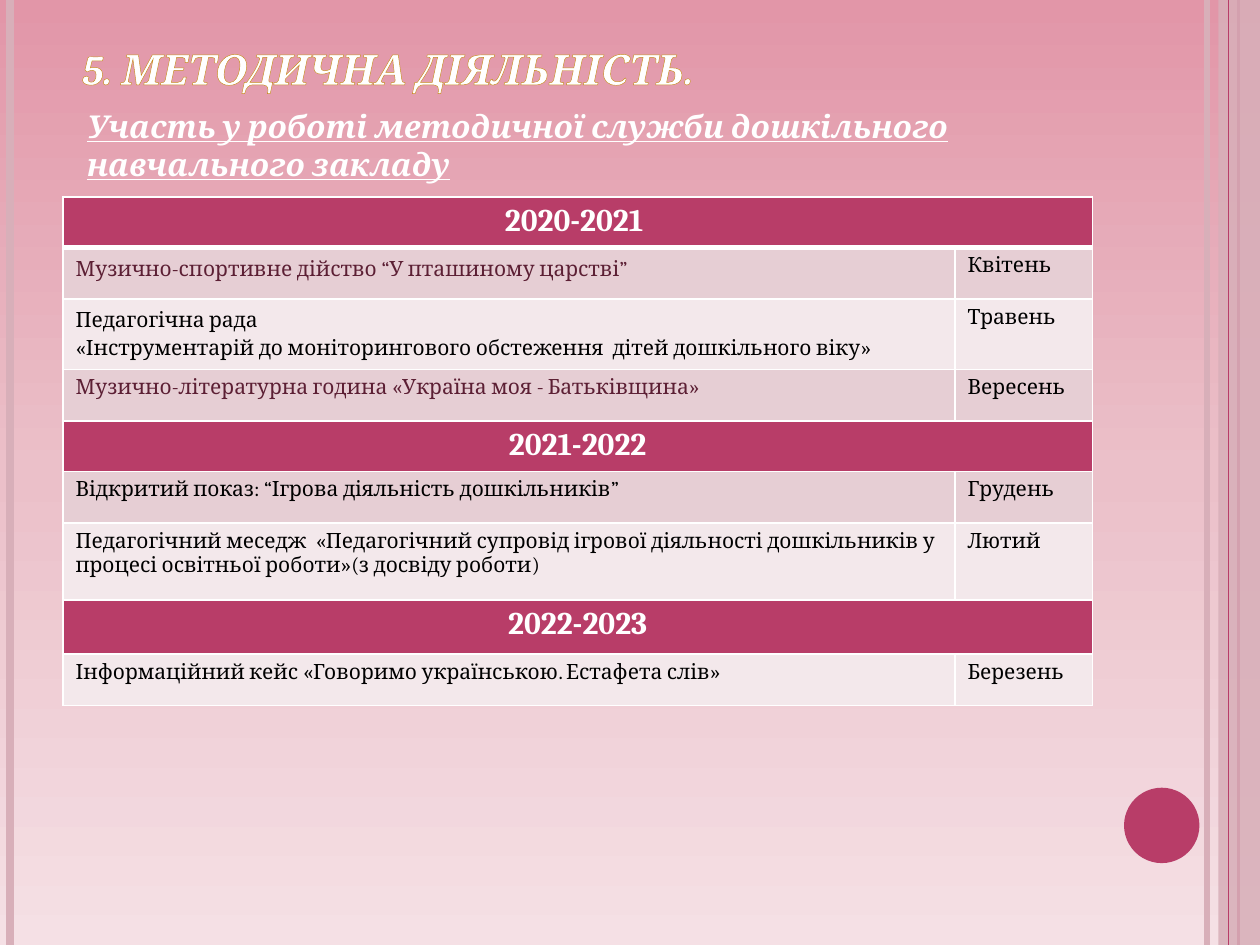
"""Build the slide on methodical work with its table of events by year."""
from copy import deepcopy

from pptx import Presentation
from pptx.dml.color import RGBColor
from pptx.enum import shapes as sh, text as tx
from pptx.oxml import parse_xml
from pptx.oxml.ns import nsdecls, qn
from pptx.util import Cm, Pt

WHITE = RGBColor(255, 255, 255)
BLACK = RGBColor(0, 0, 0)
BERRY = RGBColor(0xB8, 0x3D, 0x68)
PLUM = RGBColor(0x5C, 0x1F, 0x34)
ROSE = RGBColor(0xD8, 0xAF, 0xB9)
DARK = RGBColor(0xE6, 0xCE, 0xD4)
LIGHT = RGBColor(0xF3, 0xE8, 0xEB)
GOLD = RGBColor(0xC6, 0x8B, 0x1C)
SKY = [RGBColor(0xE2, 0x96, 0xA8), RGBColor(0xEB, 0xC0, 0xC9),
       RGBColor(0xF5, 0xE0, 0xE5)]
FONT = "Cambria"
WIDE, HIGH = 25.4, 19.05

TITLE = "5. МЕТОДИЧНА ДІЯЛЬНІСТЬ. "
TOPIC = "Участь у роботі методичної служби дошкільного навчального закладу"
YEARS = [("2020-2021 ", 0.99), ("2021-2022", 0.99), ("2022-2023", 1.09)]
EVENTS = [
    [("Музично-спортивне дійство “У пташиному царстві”",
      "Квітень", 1.04, DARK, PLUM, 1.15),
     ("Педагогічна рада\n«Інструментарій до моніторингового обстеження"
      "  дітей дошкільного віку»", "Травень", 1.37, LIGHT, BLACK, 1.15),
     ("Музично-літературна година «Україна моя - Батьківщина»",
      "Вересень", 1.04, DARK, PLUM, None)],
    [("Відкритий показ: “Ігрова діяльність дошкільників”",
      "Грудень", 1.04, DARK, BLACK, None),
     ("Педагогічний меседж  «Педагогічний супровід ігрової діяльності "
      "дошкільників у процесі освітньої роботи»(з досвіду роботи)",
      "Лютий", 1.55, LIGHT, BLACK, None)],
    [("Інформаційний кейс «Говоримо українською. Естафета слів»",
      "Березень", 1.04, LIGHT, BLACK, None)],
]
COLS = [17.98, 2.77]
RAILS = [(24.33, ROSE, 3), (0.2, ROSE, 4.5), (24.97, BERRY, 1.5)]
EDGE = (24.77, BERRY, 0.75)


def style(para, size, color, bold=False, italic=False):
    font = para.font
    font.name, font.size = FONT, Pt(size)
    font.bold, font.italic = bold, italic
    font.color.rgb = color


def stroke(tag, color, width):
    return parse_xml(
        f'<a:{tag} {nsdecls("a")} w="{Pt(width)}"><a:solidFill>'
        f'<a:srgbClr val="{color}"/></a:solidFill></a:{tag}>')


def rail(slide, left, color, width):
    line = slide.shapes.add_connector(
        sh.MSO_CONNECTOR.STRAIGHT, Cm(left), 0, Cm(left), Cm(HIGH))
    line.line.color.rgb = color
    line.line.width = Pt(width)
    line._element.spPr.append(parse_xml(f'<a:effectLst {nsdecls("a")}/>'))


def solid(slide, kind, box, color):
    shape = slide.shapes.add_shape(kind, *map(Cm, box))
    shape.shadow.inherit = False
    shape.fill.solid()
    shape.fill.fore_color.rgb = color
    shape.line.fill.background()
    return shape


def paint(slide):
    fill = slide.background.fill
    fill.gradient()
    fill.gradient_angle = 270
    stops = slide._element.find(".//" + qn("a:gsLst"))
    stops.insert(1, deepcopy(stops[0]))
    for i, (stop, color) in enumerate(zip(fill.gradient_stops, SKY)):
        stop.color.rgb = color
        stop.position = i / 2


def frame(slide):
    paint(slide)
    for item in RAILS:
        rail(slide, *item)
    band = solid(slide, sh.MSO_SHAPE.RECTANGLE,
                 (24.56, 0, WIDE - 24.56, HIGH), ROSE)
    tint = band._element.spPr.find(".//" + qn("a:srgbClr"))
    tint.append(parse_xml(f'<a:alpha {nsdecls("a")} val="87000"/>'))
    rail(slide, *EDGE)
    solid(slide, sh.MSO_SHAPE.OVAL, (22.66, 15.88, 1.52, 1.52), BERRY)


def label(slide, words, box, size):
    body = slide.shapes.add_textbox(*map(Cm, box)).text_frame
    body.word_wrap = True
    para = body.paragraphs[0]
    para.text = words
    style(para, size, WHITE, True, True)
    return body


def fill_cell(cell, words, fill, color, size=12, bold=False,
              align=None, space=None, base=1):
    cell.text = words
    for para in cell.text_frame.paragraphs:
        style(para, size, color, bold)
        para.alignment, para.line_spacing = align, space
    cell.fill.solid()
    cell.fill.fore_color.rgb = fill
    props = cell._tc.get_or_add_tcPr()
    for i, tag in enumerate(("lnL", "lnR", "lnT", "lnB")):
        props.insert(i, stroke(tag, WHITE, base if tag == "lnB" else 1))


def grid(slide):
    rows = []
    for year, events in zip(YEARS, EVENTS):
        rows += [year, *events]
    highs = [row[1] if len(row) == 2 else row[2] for row in rows]
    table = slide.shapes.add_table(
        len(rows), 2, Cm(1.27), Cm(3.97), Cm(sum(COLS)), Cm(sum(highs))).table
    for col, width in zip(table.columns, COLS):
        col.width = Cm(width)
    for i, (row, high) in enumerate(zip(rows, highs)):
        table.rows[i].height = Cm(high)
        left, right = table.cell(i, 0), table.cell(i, 1)
        if len(row) == 2:
            left.merge(right)
            for cell, words in ((left, row[0]), (right, "")):
                fill_cell(cell, words, BERRY, WHITE, 18, True,
                          tx.PP_ALIGN.CENTER, base=1 if i else 3)
        else:
            words, month, _, fill, color, space = row
            align = tx.PP_ALIGN.JUSTIFY if space else None
            fill_cell(left, words, fill, color, align=align, space=space)
            fill_cell(right, month, fill, BLACK)


def main():
    deck = Presentation()
    deck.slide_width, deck.slide_height = Cm(WIDE), Cm(HIGH)
    slide = deck.slides.add_slide(deck.slide_layouts[6])
    frame(slide)
    topic = label(slide, TOPIC, (1.5, 2.51, 20.52, 2.01), 18)
    topic.vertical_anchor = tx.MSO_ANCHOR.BOTTOM
    topic.margin_bottom = Cm(0.84)
    topic.paragraphs[0].font.underline = True
    grid(slide)
    title = label(slide, TITLE, (1.4, 0.74, 22.02, 2.31), 24)
    run = title.paragraphs[0].runs[0]
    run._r.get_or_add_rPr().insert(0, stroke("ln", GOLD, 0.71))
    deck.save("out.pptx")


if __name__ == "__main__":
    main()
